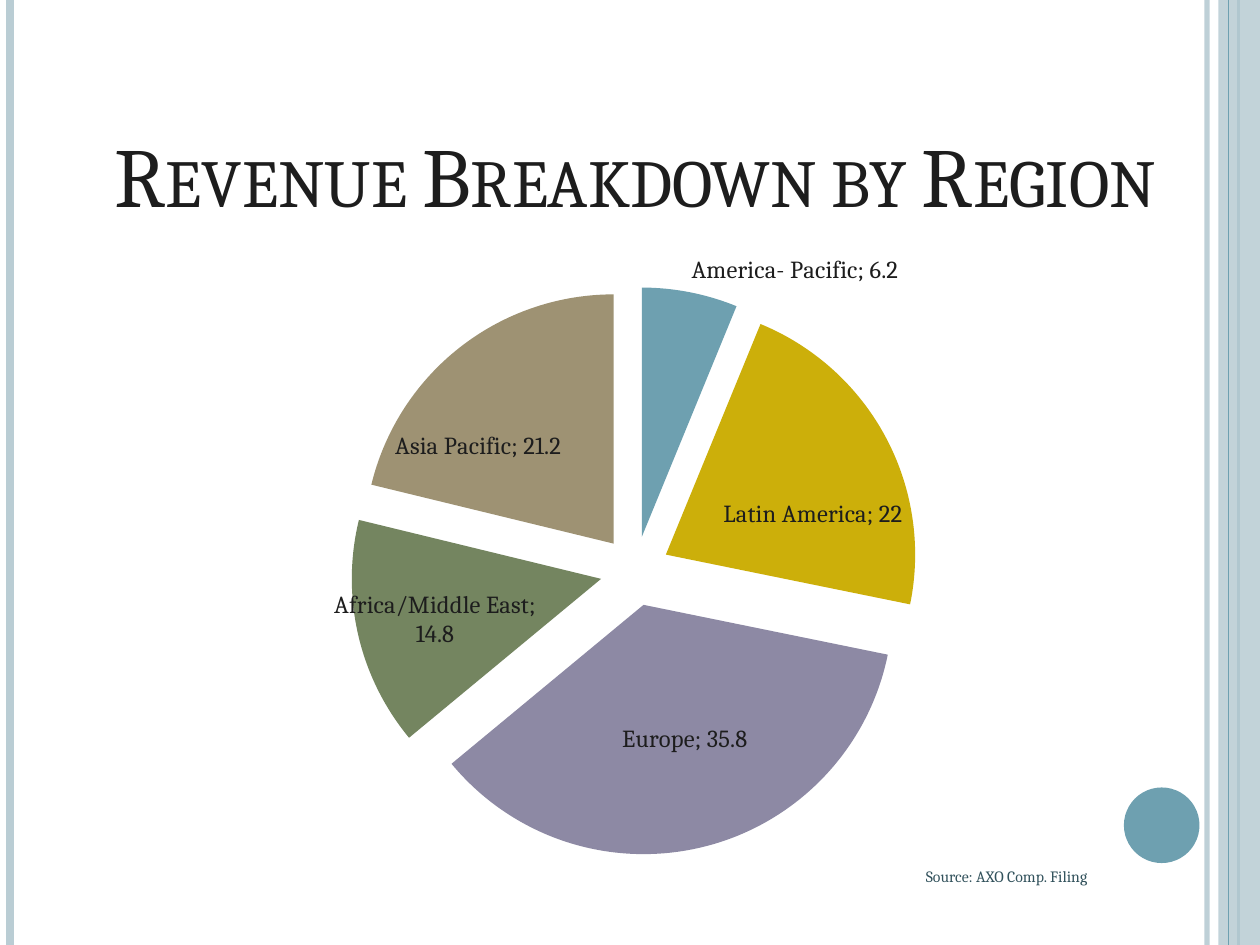
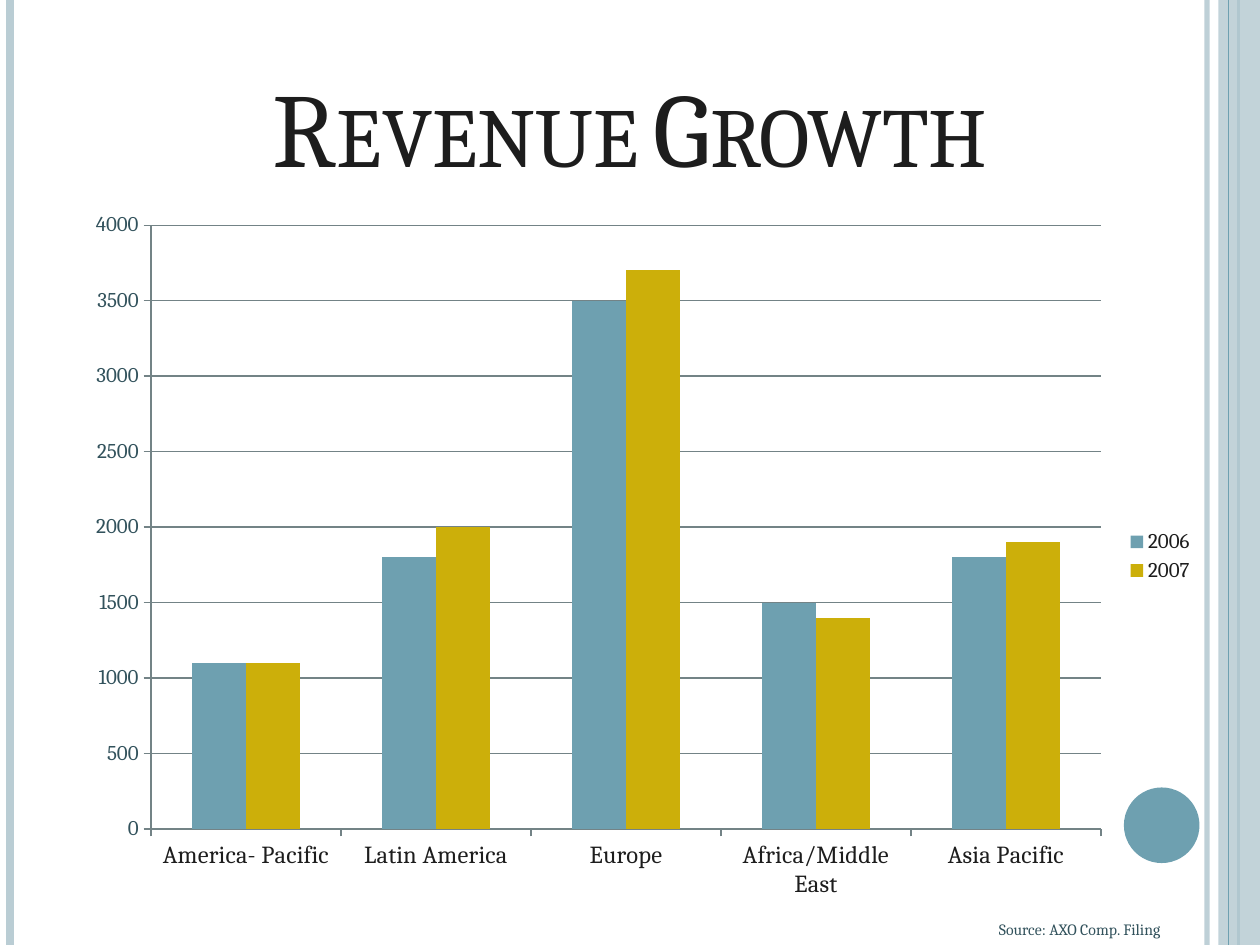
from dataclasses import dataclass

from lxml import etree
from pptx import Presentation
from pptx.chart.data import CategoryChartData
from pptx.dml.color import RGBColor
from pptx.enum.chart import (XL_CHART_TYPE, XL_LABEL_POSITION, XL_LEGEND_POSITION,
                             XL_TICK_MARK)
from pptx.enum.shapes import MSO_CONNECTOR, MSO_SHAPE
from pptx.enum.text import MSO_ANCHOR, MSO_AUTO_SIZE, PP_ALIGN
from pptx.oxml.ns import qn
from pptx.util import Pt

PIE, COLUMN = XL_CHART_TYPE.PIE, XL_CHART_TYPE.COLUMN_CLUSTERED
BEST_FIT, CENTER_LABEL = XL_LABEL_POSITION.BEST_FIT, XL_LABEL_POSITION.CENTER
LEGEND_RIGHT = XL_LEGEND_POSITION.RIGHT
TICK_OUTSIDE = XL_TICK_MARK.OUTSIDE
STRAIGHT = MSO_CONNECTOR.STRAIGHT
RECT, OVAL = MSO_SHAPE.RECTANGLE, MSO_SHAPE.OVAL
BOTTOM, CENTER = MSO_ANCHOR.BOTTOM, PP_ALIGN.CENTER
NO_AUTOFIT = MSO_AUTO_SIZE.NONE

PX = 9144  # 100 px to the inch
WIDTH, HEIGHT = 1000, 750
FONT = "Cambria"

INK = RGBColor(0x1D, 0x1D, 0x1D)
SLATE = RGBColor(0x32, 0x52, 0x5C)
GRID = RGBColor(0x73, 0x83, 0x86)
MIST = RGBColor(0xBA, 0xCD, 0xD4)
TEAL = RGBColor(0x6E, 0xA0, 0xB0)
GOLD = RGBColor(0xCC, 0xAF, 0x0A)
LILAC = RGBColor(0x8D, 0x89, 0xA4)
GREEN = RGBColor(0x74, 0x85, 0x60)
TAN = RGBColor(0x9E, 0x92, 0x73)
PALETTE = [TEAL, GOLD, LILAC, GREEN, TAN]

REGIONS = ["America- Pacific", "Latin America", "Europe", "Africa/Middle East",
           "Asia Pacific"]
SHARES = [6.2, 22, 35.8, 14.8, 21.2]
REVENUE = {"2006": [1100, 1800, 3500, 1500, 1800],
           "2007": [1100, 2000, 3700, 1400, 1900]}
SOURCE = "Source: AXO Comp. Filing"


@dataclass(frozen=True)
class Box:
    x: int
    y: int
    w: int
    h: int

    def emu(self) -> tuple[int, int, int, int]:
        return self.x * PX, self.y * PX, self.w * PX, self.h * PX


@dataclass(frozen=True)
class Stripe:
    x: int
    weight: float
    color: RGBColor
    opacity: int = 100


@dataclass(frozen=True)
class Block:
    shape: int
    box: Box
    color: RGBColor
    opacity: int = 100


DECOR = [
    Stripe(958, 3, MIST, 93),
    Stripe(8, 4.5, MIST),
    Stripe(983, 1.5, TEAL),
    Block(RECT, Box(967, 0, 33, HEIGHT), MIST, 87),
    Stripe(975, 0.75, TEAL),
    Block(OVAL, Box(892, 625, 60, 60), TEAL),
]

# Offsets of the hand-placed pie labels, as fractions of the chart
LABEL_SHIFTS = {2: (0.01, 0.02), 3: (-0.04, 0.02)}


def set_opacity(shape, opacity: int) -> None:
    if opacity < 100:
        clr = shape.element.spPr.find(".//" + qn("a:srgbClr"))
        etree.SubElement(clr, qn("a:alpha")).set("val", str(opacity * 1000))


def draw_stripe(s, stripe: Stripe):
    x = stripe.x * PX
    line = s.shapes.add_connector(STRAIGHT, x, 0, x, HEIGHT * PX)
    line.line.color.rgb = stripe.color
    line.line.width = Pt(stripe.weight)
    etree.SubElement(line.element.spPr, qn("a:effectLst"))
    return line


def draw_block(s, block: Block):
    sp = s.shapes.add_shape(block.shape, *block.box.emu())
    sp.shadow.inherit = False
    sp.fill.solid()
    sp.fill.fore_color.rgb = block.color
    sp.line.fill.background()
    return sp


def move_decor_to_layout(s) -> None:
    """Draw the side bands and move them to the layout, so all slides share them."""
    for number, item in enumerate(DECOR, start=100):
        draw = draw_stripe if isinstance(item, Stripe) else draw_block
        sp = draw(s, item)
        set_opacity(sp, item.opacity)
        sp.element.xpath("./*/p:cNvPr")[0].set("id", str(number))
        s.slide_layout.shapes.element.append(sp.element)


def style_font(font, size: float, color: RGBColor) -> None:
    font.name = FONT
    font.size = Pt(size)
    font.color.rgb = color
    font.bold = False


def add_run(p, text: str, size: float, color: RGBColor):
    r = p.add_run()
    r.text = text
    style_font(r.font, size, color)
    return r


def set_title(s, box: Box, runs: list[tuple[str, int]]) -> None:
    title = s.shapes.title
    title.left, title.top, title.width, title.height = box.emu()
    tf = title.text_frame
    tf.auto_size = NO_AUTOFIT
    tf.vertical_anchor = BOTTOM
    p = tf.paragraphs[0]
    p.alignment = CENTER
    for text, size in runs:
        r = add_run(p, text, size, INK)
        r.font._element.set("cap", "small")


def add_source(s, box: Box) -> None:
    tf = s.shapes.add_textbox(*box.emu()).text_frame
    tf.word_wrap = False
    add_run(tf.paragraphs[0], SOURCE, 9, SLATE)


def add_chart(s, kind: int, box: Box, series: dict[str, list[float]]):
    data = CategoryChartData()
    data.categories = REGIONS
    for name, values in series.items():
        data.add_series(name, values)
    chart = s.shapes.add_chart(kind, *box.emu(), data).chart
    chart.has_title = False
    chart.has_legend = False
    style_font(chart.font, 10, SLATE)
    return chart


def make_layout(**settings: object):
    """Return a c:layout element with the given manual settings."""
    layout = etree.Element(qn("c:layout"))
    manual = etree.SubElement(layout, qn("c:manualLayout"))
    for tag, value in settings.items():
        etree.SubElement(manual, qn(f"c:{tag}")).set("val", str(value))
    return layout


def add_share_pie(s, box: Box) -> None:
    chart = add_chart(s, PIE, box, {"Series 1": SHARES})
    area = chart.element.xpath(".//c:plotArea")[0]
    for old in area.findall(qn("c:layout")):
        area.remove(old)
    area.insert(0, make_layout(layoutTarget="inner", xMode="edge", yMode="edge",
                               x=0.07, y=0.13, w=0.85, h=0.84))
    explosion = etree.Element(qn("c:explosion"))
    explosion.set("val", "14")
    area.xpath(".//c:ser/c:tx")[0].addnext(explosion)

    plot = chart.plots[0]
    plot.vary_by_categories = True
    pie = plot.series[0]
    for i, color in enumerate(PALETTE):
        fill = pie.points[i].format.fill
        fill.solid()
        fill.fore_color.rgb = color

    labels = pie.data_labels
    labels.show_value = labels.show_category_name = True
    labels.show_percentage = False
    labels.position = BEST_FIT
    style_font(labels.font, 14, INK)
    for i, (dx, dy) in LABEL_SHIFTS.items():
        label = pie.points[i].data_label
        style_font(label.font, 14, INK)
        label.position = CENTER_LABEL
        dlbl = area.xpath(f".//c:dLbl[c:idx/@val='{i}']")[0]
        dlbl.find(qn("c:showCatName")).set("val", "1")
        dlbl.find(qn("c:idx")).addnext(make_layout(x=dx, y=dy))


def add_growth_columns(s, box: Box) -> None:
    chart = add_chart(s, COLUMN, box, REVENUE)
    plot = chart.plots[0]
    plot.vary_by_categories = False
    plot.gap_width = 150
    plot.overlap = 0
    for series, color in zip(plot.series, PALETTE):
        series.format.fill.solid()
        series.format.fill.fore_color.rgb = color

    values = chart.value_axis
    values.minimum_scale, values.maximum_scale, values.major_unit = 0, 4000, 500
    values.has_major_gridlines = True
    for axis, size, color in ((chart.category_axis, 14, INK), (values, 12, SLATE)):
        axis.major_tick_mark = TICK_OUTSIDE
        style_font(axis.tick_labels.font, size, color)
    for part in (chart.category_axis, values, values.major_gridlines):
        part.format.line.color.rgb = GRID
        part.format.line.width = Pt(0.75)

    chart.has_legend = True
    chart.legend.position = LEGEND_RIGHT
    chart.legend.include_in_layout = False
    style_font(chart.legend.font, 12, INK)


def main() -> None:
    prs = Presentation()
    prs.slide_width, prs.slide_height = WIDTH * PX, HEIGHT * PX
    title_only = prs.slide_layouts[5]

    s = prs.slides.add_slide(title_only)
    move_decor_to_layout(s)
    set_title(s, Box(50, 30, 908, 153), [("Revenue Breakdown by Region", 48)])
    add_share_pie(s, Box(67, 158, 883, 537))
    add_source(s, Box(725, 683, 173, 56))

    s = prs.slides.add_slide(title_only)
    set_title(s, Box(50, 30, 900, 125), [("Revenue", 60), (" ", 48), ("Growth", 60)])
    add_growth_columns(s, Box(58, 158, 900, 567))
    add_source(s, Box(783, 725, 173, 25))

    prs.save("out.pptx")


if __name__ == "__main__":
    main()
